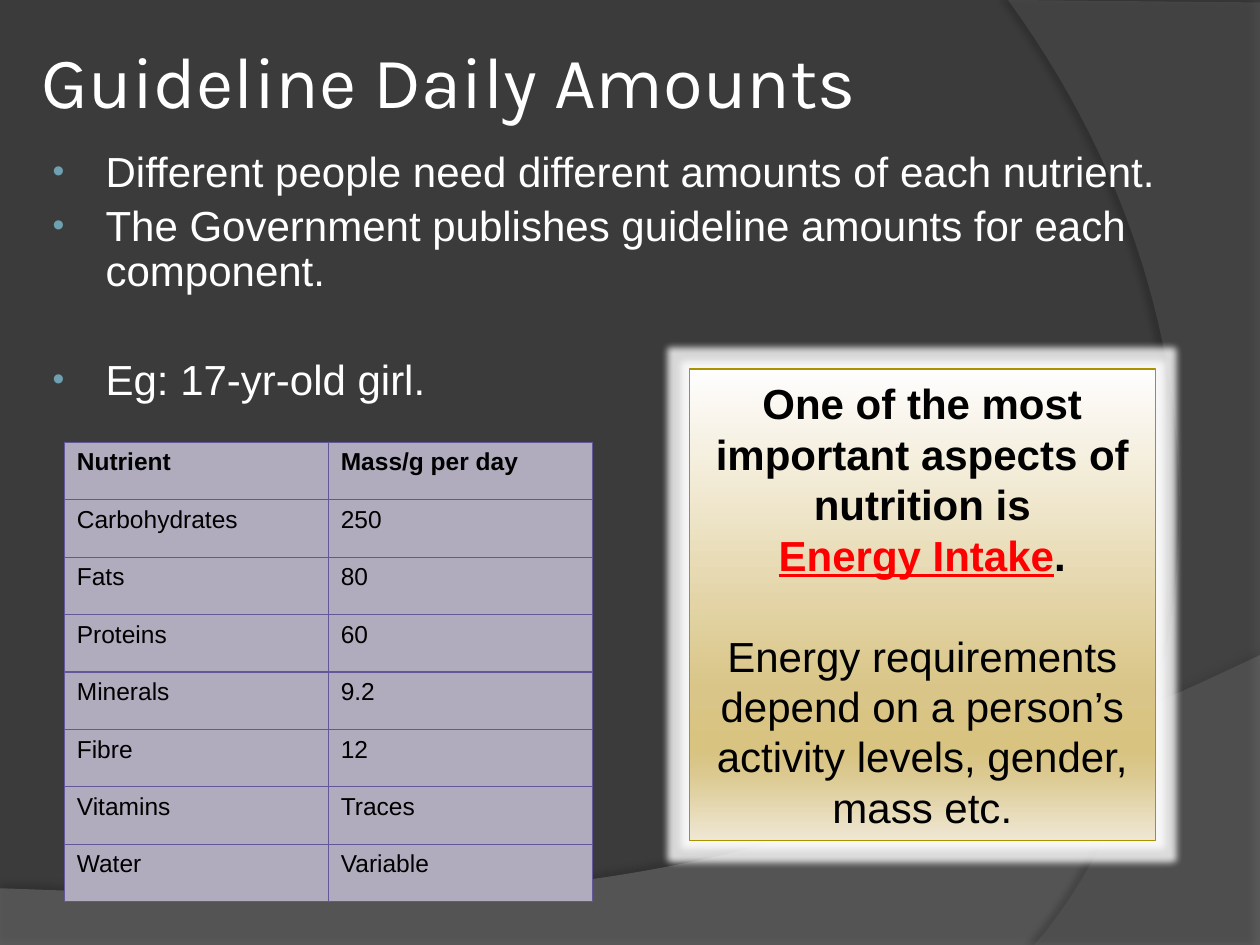
from lxml.etree import SubElement
from pptx import Presentation
from pptx.dml.color import RGBColor
from pptx.enum.shapes import MSO_SHAPE
from pptx.enum.text import MSO_ANCHOR, PP_ALIGN
from pptx.oxml.ns import qn
from pptx.util import Inches, Pt

COLORS = {
    "background": "3B3B3B", "wave": "7F7F7F", "arc": "5E5E5E",
    "white": "FFFFFF", "black": "000000", "red": "FF0000",
    "bullet": "6EA0B0", "cell": "B0ACBD", "border": "625899",
    "box_line": "AB9200",
}
BOX_STOPS = [(0, "FFFEFE"), (68, "D9C587"), (81, "D8C381"),
             (86, "DBC990"), (100, "EFE7D3")]
BULLETS = [
    ("Different people need different amounts of each nutrient.", 5),
    ("The Government publishes guideline amounts for each component.", 5),
    ("Eg: 17-yr-old girl.", 36),
]
NUTRIENTS = [
    ("Nutrient", "Mass/g per day"), ("Carbohydrates", "250"), ("Fats", "80"),
    ("Proteins", "60"), ("Minerals", "9.2"), ("Fibre", "12"),
    ("Vitamins", "Traces"), ("Water", "Variable"),
]
BOX_TEXT = [
    (0, [("One of the most important aspects of nutrition is", {"bold": True})]),
    (0, [("Energy Intake", {"bold": True, "underline": True, "color": "red"}),
         (".", {"bold": True})]),
    (29, [("Energy requirements depend on a person’s activity levels, "
           "gender, mass etc.", {})]),
]


def rgb(name):
    return RGBColor.from_string(COLORS[name])


def add_xml(parent, tag, **attrs):
    return SubElement(parent, qn(tag), {k: str(v) for k, v in attrs.items()})


def add_color(parent, value, alpha=100):
    color = add_xml(parent, "a:srgbClr", val=value)
    if alpha < 100:
        add_xml(color, "a:alpha", val=alpha * 1000)


def add_effect(sp, tag, color, alpha, **attrs):
    sp.shadow.inherit = False
    effects = sp._element.spPr.find(qn("a:effectLst"))
    add_color(add_xml(effects, tag, **attrs), COLORS[color], alpha)


def add_run(p, text, size, color="white", name="Arial", **formats):
    r = p.add_run()
    r.text = text
    r.font.color.rgb = rgb(color)
    for key, value in {"name": name, "size": Pt(size), **formats}.items():
        setattr(r.font, key, value)


def next_paragraph(tf, index):
    return tf.add_paragraph() if index else tf.paragraphs[0]


def curve(p0, p1, p2, p3, steps=60):
    """Return points along a cubic Bezier curve."""
    points = []
    for i in range(steps + 1):
        t = i / steps
        u = 1 - t
        weights = (u ** 3, 3 * u * u * t, 3 * u * t * t, t ** 3)
        points.append(tuple(sum(w * p[axis] for w, p in
                                zip(weights, (p0, p1, p2, p3)))
                            for axis in (0, 1)))
    return points


def add_backdrop(slide, points, color, alpha, shadow_alpha, distance, angle):
    points = [(Inches(x), Inches(y)) for x, y in points]
    builder = slide.shapes.build_freeform(*points[0])
    builder.add_line_segments(points[1:], close=True)
    sp = builder.convert_to_shape()
    sp.fill.solid()
    sp.fill.fore_color.rgb = rgb(color)
    add_xml(sp._element.spPr.find(".//" + qn("a:srgbClr")), "a:alpha",
            val=alpha * 1000)
    sp.line.fill.background()
    add_effect(sp, "a:outerShdw", "black", shadow_alpha, blurRad=Pt(4),
               dist=Pt(distance), dir=angle * 60000, rotWithShape=0)


def add_title(slide, text):
    title = slide.shapes.title
    title.left, title.top = Inches(0.28), Inches(0.21)
    title.width, title.height = Inches(9.45), Inches(0.85)
    tf = title.text_frame
    tf.vertical_anchor = MSO_ANCHOR.MIDDLE
    for side in ("left", "top", "right", "bottom"):
        setattr(tf, f"margin_{side}", Inches(0.05))
    p = tf.paragraphs[0]
    p.alignment = PP_ALIGN.LEFT
    add_run(p, text, 41.4, name="Karla")


def add_bullets(slide):
    sp = slide.shapes.add_textbox(Inches(0.28), Inches(1.15),
                                  Inches(9.45), Inches(6.14))
    tf = sp.text_frame
    tf.word_wrap = True
    for i, (text, space) in enumerate(BULLETS):
        p = next_paragraph(tf, i)
        p.line_spacing, p.space_before = 0.9, Pt(space)
        pPr = p._p.get_or_add_pPr()
        pPr.set("marL", str(Inches(0.46)))
        pPr.set("indent", str(Inches(-0.42)))
        add_color(add_xml(pPr, "a:buClr"), COLORS["bullet"])
        add_xml(pPr, "a:buSzPct", val=80000)
        add_xml(pPr, "a:buFont", typeface="Arial")
        add_xml(pPr, "a:buChar", char="•")
        add_run(p, text, 24)


def style_cell(cell):
    tcPr = cell._tc.get_or_add_tcPr()
    for tag in ("a:lnL", "a:lnR", "a:lnT", "a:lnB"):
        ln = add_xml(tcPr, tag, w=Pt(0.75))
        add_color(add_xml(ln, "a:solidFill"), COLORS["border"])
    cell.fill.solid()
    cell.fill.fore_color.rgb = rgb("cell")


def add_nutrient_table(slide):
    table = slide.shapes.add_table(len(NUTRIENTS), 2, Inches(0.51), Inches(3.51),
                                   Inches(4.19), Inches(3.65)).table
    for i, row in enumerate(NUTRIENTS):
        for j, text in enumerate(row):
            cell = table.cell(i, j)
            style_cell(cell)
            p = cell.text_frame.paragraphs[0]
            p.space_before = Pt(3)
            add_run(p, text, 14, "black", bold=i == 0)


def add_energy_box(slide):
    sp = slide.shapes.add_shape(MSO_SHAPE.RECTANGLE, Inches(5.47), Inches(2.93),
                                Inches(3.7), Inches(3.74))
    sp.fill.gradient()
    sp.fill.gradient_angle = 270
    stops = sp._element.spPr.find(".//" + qn("a:gsLst"))
    for stop in list(stops):
        stops.remove(stop)
    for position, value in BOX_STOPS:
        add_color(add_xml(stops, "a:gs", pos=position * 1000), value)
    sp.line.color.rgb = rgb("box_line")
    sp.line.width = Pt(0.75)
    add_effect(sp, "a:glow", "white", 80, rad=Pt(8))
    tf = sp.text_frame
    tf.word_wrap = True
    for i, (space, runs) in enumerate(BOX_TEXT):
        p = next_paragraph(tf, i)
        p.alignment, p.space_before = PP_ALIGN.CENTER, Pt(space)
        for text, formats in runs:
            add_run(p, text, 24, **{"color": "black", **formats})


def main():
    prs = Presentation()
    prs.slide_width, prs.slide_height = Inches(10), Inches(7.5)
    slide = prs.slides.add_slide(prs.slide_layouts[5])
    slide.background.fill.solid()
    slide.background.fill.fore_color.rgb = rgb("background")
    wave = curve((10, 5.2), (5.59, 7.29), (3.91, 7.19), (0, 7.05))
    add_backdrop(slide, [(0, 7.5), (10, 7.5)] + wave, "wave", 45, 35, 3.5, 270)
    arc = curve((8.21, 7.5), (9.35, 6.19), (10.18, 3), (8, 0))
    add_backdrop(slide, [(10, 0.02), (10, 7.5)] + arc, "arc", 40, 45, 4, 180)
    add_title(slide, "Guideline Daily Amounts")
    add_bullets(slide)
    add_nutrient_table(slide)
    add_energy_box(slide)
    prs.save("out.pptx")


if __name__ == "__main__":
    main()
